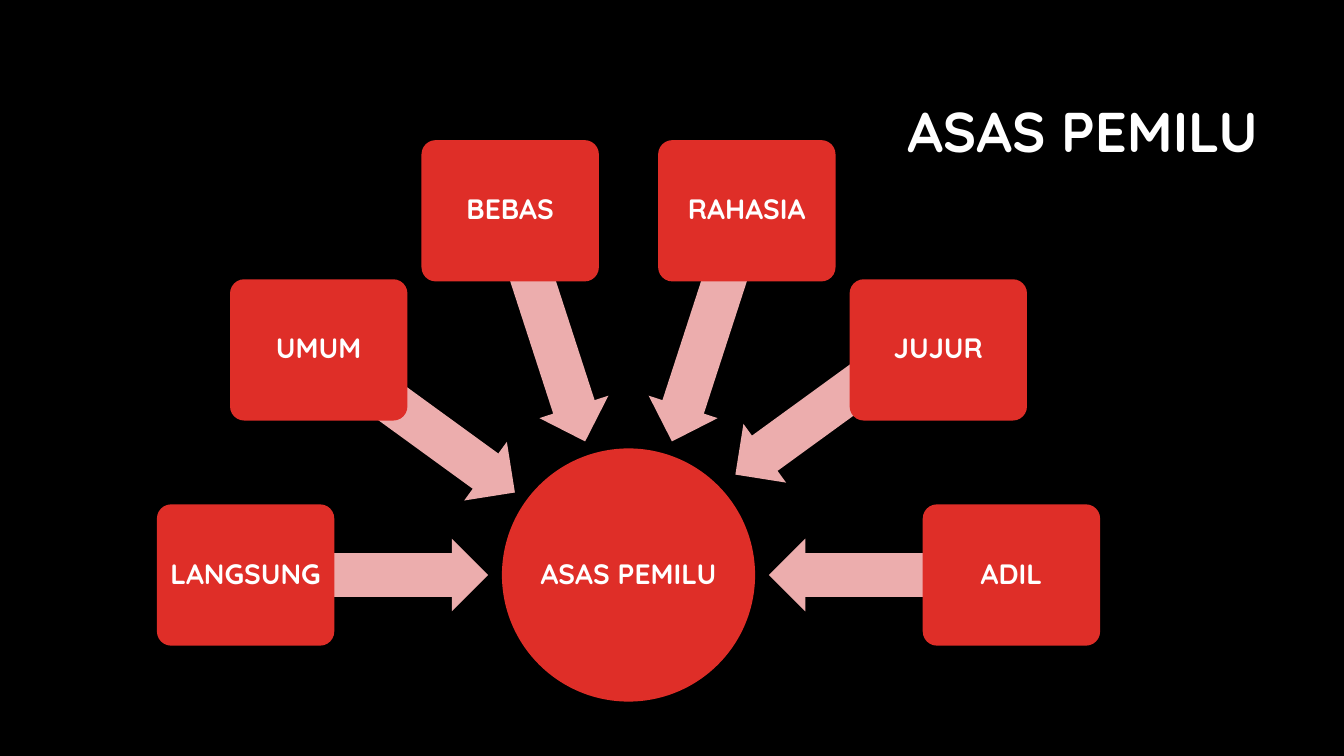
from dataclasses import dataclass
from math import cos, radians, sin

from pptx import Presentation
from pptx.dml.color import RGBColor
from pptx.enum.shapes import MSO_SHAPE as Preset
from pptx.enum.text import MSO_ANCHOR as Anchor, PP_ALIGN as Align
from pptx.shapes.autoshape import Shape
from pptx.slide import Slide
from pptx.util import Cm, Pt


@dataclass(frozen=True)
class Theme:
    """Colours, font and type sizes of the slide."""
    background: RGBColor = RGBColor(0x00, 0x00, 0x00)
    text: RGBColor = RGBColor(0xFF, 0xFF, 0xFF)
    node: RGBColor = RGBColor(0xDF, 0x2E, 0x28)
    arrow: RGBColor = RGBColor(0xEC, 0xAD, 0xAD)
    font: str = "Quicksand"
    title_size: Pt = Pt(40)
    label_size: Pt = Pt(20)


@dataclass(frozen=True)
class Principle:
    """An election principle and the shift of its arrow in centimetres."""
    label: str
    arrow_dx: float = 0
    arrow_dy: float = 0


THEME = Theme()
HUB_X, HUB_Y, HUB_SIZE = 15.84, 14.49, 6.38
BOX_RADIUS, BOX_WIDTH, BOX_HEIGHT = 9.65, 4.47, 3.56
ARROW_RADIUS, ARROW_WIDTH, ARROW_HEIGHT = 6.6, 6.12, 1.83
START_ANGLE, SWEEP = 180, 180
PRINCIPLES = (
    Principle("LANGSUNG"),
    Principle("UMUM"),
    Principle("BEBAS"),
    Principle("RAHASIA"),
    Principle("JUJUR", -0.17, -0.45),
    Principle("ADIL"),
)


def write(holder: Shape, text: str, size: Pt, align: Align, inset: Cm) -> None:
    """Set one styled, vertically centred paragraph."""
    frame = holder.text_frame
    frame.word_wrap = True
    frame.vertical_anchor = Anchor.MIDDLE
    frame.margin_left = frame.margin_right = inset
    paragraph = frame.paragraphs[0]
    paragraph.text = text
    paragraph.alignment = align
    paragraph.line_spacing = 0.9
    font = paragraph.font
    font.name, font.size, font.bold = THEME.font, size, True
    font.color.rgb = THEME.text


def add_centred(slide: Slide, preset: Preset, x: float, y: float,
                width: float, height: float, fill: RGBColor) -> Shape:
    """Add a flat shape around a centre point given in centimetres."""
    shape = slide.shapes.add_shape(preset, Cm(x - width / 2), Cm(y - height / 2),
                                   Cm(width), Cm(height))
    shape.shadow.inherit = False
    shape.fill.solid()
    shape.fill.fore_color.rgb = fill
    shape.line.fill.background()
    return shape


def add_principle(slide: Slide, principle: Principle, angle: float) -> None:
    """Add a principle box with its arrow towards the hub."""
    dx, dy = cos(radians(angle)), sin(radians(angle))
    arrow = add_centred(slide, Preset.LEFT_ARROW,
                        HUB_X + ARROW_RADIUS * dx + principle.arrow_dx,
                        HUB_Y + ARROW_RADIUS * dy + principle.arrow_dy,
                        ARROW_WIDTH, ARROW_HEIGHT, THEME.arrow)
    arrow.adjustments[0] = 0.6
    arrow.adjustments[1] = 0.5
    arrow.rotation = angle % 360
    box = add_centred(slide, Preset.ROUNDED_RECTANGLE,
                      HUB_X + BOX_RADIUS * dx, HUB_Y + BOX_RADIUS * dy,
                      BOX_WIDTH, BOX_HEIGHT, THEME.node)
    box.adjustments[0] = 0.1
    write(box, principle.label, THEME.label_size, Align.CENTER, Cm(0.1))


def main() -> None:
    """Build and save the slide."""
    deck = Presentation()
    deck.slide_width, deck.slide_height = Cm(33.87), Cm(19.05)
    slide = deck.slides.add_slide(deck.slide_layouts[6])
    slide.background.fill.solid()
    slide.background.fill.fore_color.rgb = THEME.background

    title = slide.shapes.add_textbox(Cm(16.13), Cm(1.9), Cm(15.82), Cm(2.95))
    write(title, "ASAS PEMILU", THEME.title_size, Align.RIGHT, Cm(0.25))

    hub = add_centred(slide, Preset.OVAL, HUB_X, HUB_Y, HUB_SIZE, HUB_SIZE, THEME.node)
    write(hub, "ASAS PEMILU", THEME.label_size, Align.CENTER, Cm(0.03))

    step = SWEEP / (len(PRINCIPLES) - 1)
    for index, principle in enumerate(PRINCIPLES):
        add_principle(slide, principle, START_ANGLE + index * step)

    deck.save("out.pptx")


if __name__ == "__main__":
    main()
